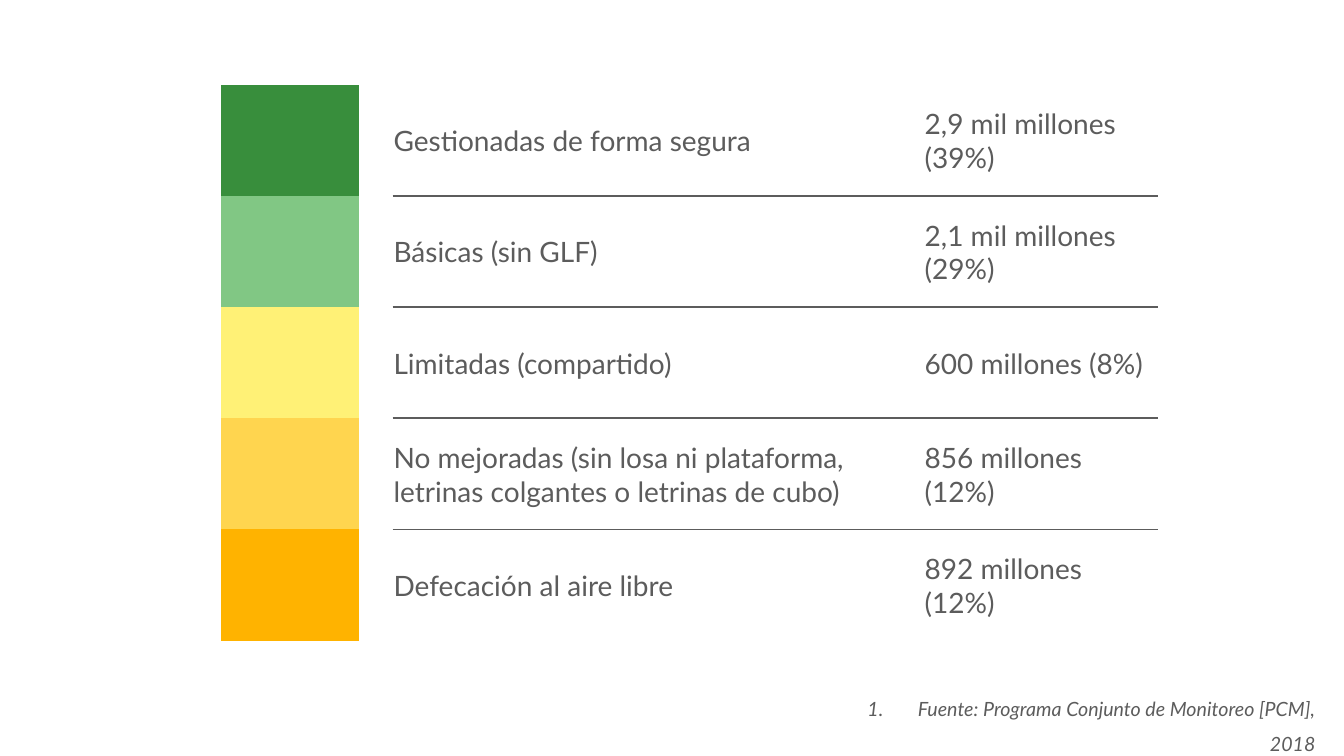
"""Build a slide with the sanitation ladder table and its source note."""
from lxml.etree import SubElement
from pptx import Presentation
from pptx.dml.color import RGBColor
from pptx.enum.text import MSO_ANCHOR as Anchor, PP_ALIGN as Align
from pptx.oxml.ns import qn
from pptx.util import Pt

GRAY = RGBColor(0x5C, 0x5C, 0x5C)
WHITE = RGBColor(0xFF, 0xFF, 0xFF)
DARK_GREEN = RGBColor(0x38, 0x8E, 0x3C)
LIGHT_GREEN = RGBColor(0x81, 0xC7, 0x84)
YELLOW = RGBColor(0xFF, 0xF1, 0x76)
AMBER = RGBColor(0xFF, 0xD5, 0x4F)
ORANGE = RGBColor(0xFF, 0xB3, 0x00)

LEVELS = [
    (DARK_GREEN, "Gestionadas de forma segura", "2,9 mil millones (39%)"),
    (LIGHT_GREEN, "Básicas (sin GLF)", "2,1 mil millones (29%)"),
    (YELLOW, "Limitadas (compartido)", "600 millones (8%)"),
    (AMBER, "No mejoradas (sin losa ni plataforma,\vletrinas colgantes o letrinas de cubo)",
     "856 millones (12%)"),
    (ORANGE, "Defecación al aire libre", "892 millones (12%)"),
]
COLUMN_WIDTHS = [98.2, 24.2, 379.4, 167.6]
ROW_HEIGHT = 79.4


def set_borders(cell, ruled_sides):
    """Draw gray rules on the given sides and clear the others."""
    properties = cell._tc.get_or_add_tcPr()
    for side in "LRTB":
        line = SubElement(properties, qn(f"a:ln{side}"), w=str(Pt(1.5)))
        if side in ruled_sides:
            fill = SubElement(line, qn("a:solidFill"))
            SubElement(fill, qn("a:srgbClr"), val=str(GRAY))
        else:
            SubElement(line, qn("a:noFill"))


def style_font(font, size):
    """Apply the slide's typeface and colour."""
    font.name = "Lato"
    font.size = Pt(size)
    font.color.rgb = GRAY


presentation = Presentation()
presentation.slide_width = Pt(960)
presentation.slide_height = Pt(540)
slide = presentation.slides.add_slide(presentation.slide_layouts[6])

table = slide.shapes.add_table(
    len(LEVELS), len(COLUMN_WIDTHS), Pt(158), Pt(60.6),
    Pt(sum(COLUMN_WIDTHS)), Pt(ROW_HEIGHT * len(LEVELS))).table
table.first_row = False
table.horz_banding = False
for column, width in zip(table.columns, COLUMN_WIDTHS):
    column.width = Pt(width)

last_row = len(LEVELS) - 1
for row_index, (color, level, population) in enumerate(LEVELS):
    table.rows[row_index].height = Pt(ROW_HEIGHT)
    rules = ("T" if row_index > 0 else "") + ("B" if row_index < last_row else "")
    for column_index, text in enumerate(["", "", level, population]):
        cell = table.cell(row_index, column_index)
        set_borders(cell, rules if text else "")
        cell.fill.solid()
        cell.fill.fore_color.rgb = WHITE if column_index else color
        if text:
            cell.vertical_anchor = Anchor.MIDDLE
            cell.margin_left = cell.margin_right = cell.margin_top = Pt(0.75)
            cell.margin_bottom = Pt(0)
            cell.text_frame.text = text
            for run in cell.text_frame.paragraphs[0].runs:
                style_font(run.font, 20)

source_note = slide.shapes.add_textbox(Pt(594), Pt(500.4), Pt(352.8), Pt(28))
text_frame = source_note.text_frame
text_frame.word_wrap = True
text_frame.vertical_anchor = Anchor.MIDDLE
text_frame.text = "Fuente: Programa Conjunto de Monitoreo [PCM], 2018"
paragraph = text_frame.paragraphs[0]
paragraph.alignment = Align.RIGHT
paragraph.line_spacing = 1.5
paragraph_properties = paragraph._p.get_or_add_pPr()
paragraph_properties.set("marL", str(Pt(36)))
paragraph_properties.set("indent", str(Pt(-36)))
SubElement(paragraph_properties, qn("a:buFont"), typeface="+mj-lt")
SubElement(paragraph_properties, qn("a:buAutoNum"), type="arabicPeriod")
note_font = paragraph.runs[0].font
style_font(note_font, 14)
note_font.italic = True

presentation.save("out.pptx")
